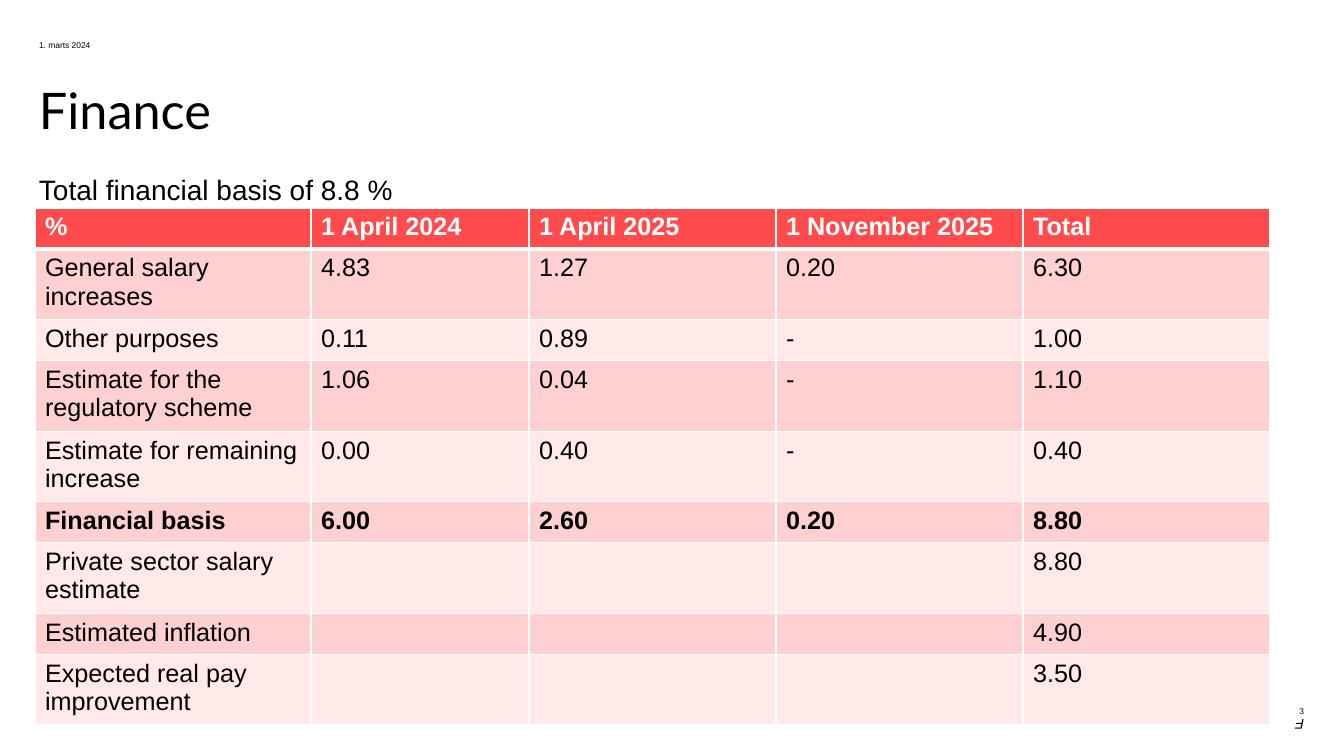
from dataclasses import dataclass

from lxml import etree
from pptx import Presentation
from pptx import util as u
from pptx.dml.color import RGBColor
from pptx.enum import text
from pptx.oxml import ns

PX_PER_INCH = 100.8


@dataclass(frozen=True)
class Theme:
    ink: str = "000000"
    paper: str = "FFFFFF"
    header: str = "FF4B4B"
    bands: tuple[str, str] = ("FFD0D0", "FFE9E9")
    body_font: str = "Arial"
    title_font: str = "Lato"
    title: int = 36
    lead: int = 20
    cell: int = 18
    mark: int = 10
    small: int = 6


THEME = Theme()


@dataclass(frozen=True)
class Label:
    words: str
    left: int
    top: int
    width: int
    height: int
    size: int
    font: str = THEME.body_font
    anchor: text.MSO_ANCHOR = text.MSO_ANCHOR.TOP
    align: text.PP_ALIGN = text.PP_ALIGN.LEFT
    spacing: float = 1.0
    italic: bool = False
    rotation: int = 0


@dataclass(frozen=True)
class Row:
    cells: tuple[str, ...]
    fill: str
    color: str = THEME.ink
    bold: bool = False
    rule: int = 1


LABELS = (
    Label("Finance", 39, 89, 1265, 82, THEME.title, THEME.title_font, spacing=0.83),
    Label("1. marts 2024", 39, 39, 109, 12, THEME.small, anchor=text.MSO_ANCHOR.MIDDLE),
    Label("3", 1266, 705, 38, 12, THEME.small, anchor=text.MSO_ANCHOR.MIDDLE,
          align=text.PP_ALIGN.RIGHT),
    Label("F", 39, 717, 1265, 39, THEME.mark, anchor=text.MSO_ANCHOR.BOTTOM,
          italic=True, rotation=180),
    Label("Total financial basis of 8.8 %", 39, 172, 536, 34, THEME.lead),
)

TABLE_LEFT, TABLE_TOP, ROW_HEIGHT = 35, 208, 41
COLUMN_WIDTHS = (276, 218, 247, 247, 247)
HEADINGS = ("%", "1 April 2024", "1 April 2025", "1 November 2025", "Total")
SUM_ROW = "Financial basis"
FIGURES = (
    ("General salary increases", "4.83", "1.27", "0.20", "6.30"),
    ("Other purposes", "0.11", "0.89", "-", "1.00"),
    ("Estimate for the regulatory scheme", "1.06", "0.04", "-", "1.10"),
    ("Estimate for remaining increase", "0.00", "0.40", "-", "0.40"),
    (SUM_ROW, "6.00", "2.60", "0.20", "8.80"),
    ("Private sector salary estimate", "", "", "", "8.80"),
    ("Estimated inflation", "", "", "", "4.90"),
    ("Expected real pay improvement", "", "", "", "3.50"),
)


def px(length: int) -> u.Emu:
    return u.Emu(round(length * u.Inches(1) / PX_PER_INCH))


def style_runs(para, font: str, size: int, color: str, bold: bool = False,
               italic: bool = False) -> None:
    for span in para.runs:
        span.font.name = font
        span.font.size = u.Pt(size)
        span.font.bold = bold
        span.font.italic = italic
        span.font.color.rgb = RGBColor.from_string(color)


def add_label(page, label: Label) -> None:
    box = page.shapes.add_textbox(px(label.left), px(label.top),
                                  px(label.width), px(label.height))
    box.rotation = label.rotation
    frame = box.text_frame
    frame.word_wrap = True
    frame.vertical_anchor = label.anchor
    frame.margin_left = frame.margin_right = frame.margin_top = frame.margin_bottom = 0
    frame.text = label.words
    para = frame.paragraphs[0]
    para.alignment = label.align
    para.line_spacing = label.spacing
    style_runs(para, label.font, label.size, THEME.ink, italic=label.italic)


def add_borders(cell, bottom: int) -> None:
    properties = cell._tc.get_or_add_tcPr()
    for side, points in (("L", 1), ("R", 1), ("T", 1), ("B", bottom)):
        line = etree.SubElement(properties, ns.qn(f"a:ln{side}"), w=str(u.Pt(points)))
        fill = etree.SubElement(line, ns.qn("a:solidFill"))
        etree.SubElement(fill, ns.qn("a:srgbClr"), val=THEME.paper)


def fill_cell(cell, words: str, row: Row) -> None:
    cell.text = words
    style_runs(cell.text_frame.paragraphs[0], THEME.body_font, THEME.cell,
               row.color, row.bold)
    add_borders(cell, row.rule)
    cell.fill.solid()
    cell.fill.fore_color.rgb = RGBColor.from_string(row.fill)


def add_finance_table(page, rows: list[Row]) -> None:
    table = page.shapes.add_table(
        len(rows), len(COLUMN_WIDTHS), px(TABLE_LEFT), px(TABLE_TOP),
        px(sum(COLUMN_WIDTHS)), px(ROW_HEIGHT * len(rows))).table
    table.horz_banding = False
    for column, width in zip(table.columns, COLUMN_WIDTHS):
        column.width = px(width)
    for table_row, row in zip(table.rows, rows):
        table_row.height = px(ROW_HEIGHT)
        for cell, words in zip(table_row.cells, row.cells):
            fill_cell(cell, words, row)


def main() -> None:
    deck = Presentation()
    deck.slide_width, deck.slide_height = px(1344), px(756)
    page = deck.slides.add_slide(deck.slide_layouts[6])

    # Title, date, page number, corner mark and lead line
    for label in LABELS:
        add_label(page, label)

    # Table with a header row and alternating bands
    rows = [Row(HEADINGS, THEME.header, THEME.paper, bold=True, rule=3)]
    rows += [Row(cells, THEME.bands[index % 2], bold=cells[0] == SUM_ROW)
             for index, cells in enumerate(FIGURES)]
    add_finance_table(page, rows)

    deck.save("out.pptx")


if __name__ == "__main__":
    main()
